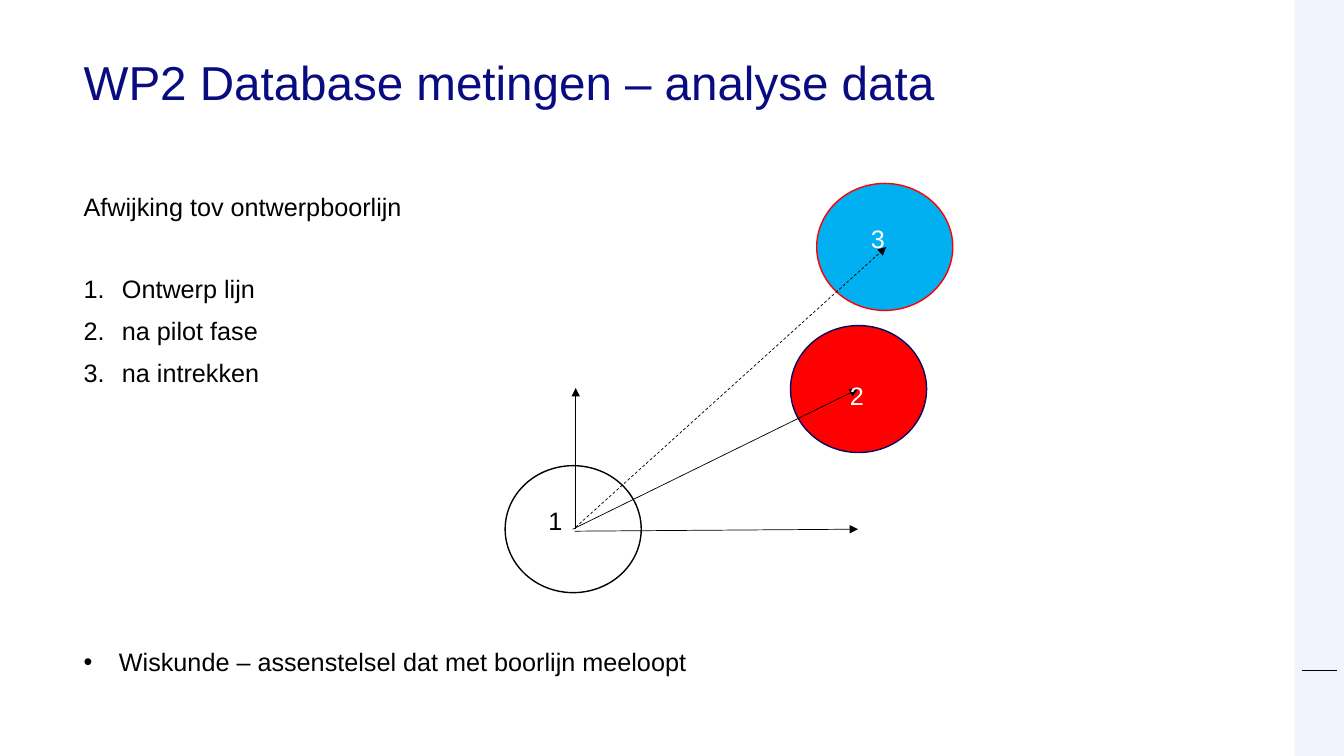
"""Builds the slide on deviations from the designed drilling line."""
from lxml.etree import SubElement
from pptx import Presentation
from pptx.dml.color import RGBColor
from pptx.enum.dml import MSO_LINE
from pptx.enum.shapes import MSO_CONNECTOR as CONNECTOR, MSO_SHAPE as SHAPE
from pptx.enum.text import MSO_ANCHOR as ANCHOR, PP_ALIGN as ALIGN
from pptx.oxml.ns import qn
from pptx.util import Inches, Pt

COLORS = {
    "title": "080C80", "text": "000000", "light": "FFFFFF", "band": "F1F3FD",
    "navy": "06095F", "red": "FF0000", "blue": "00B0F0",
}
FONT = "Arial"
LEFT, WIDTH = 0.83, 11.5


def rgb(name):
    return RGBColor.from_string(COLORS[name])


def style_font(font, size, color):
    font.name, font.size = FONT, Pt(size)
    font.color.rgb = rgb(color)


def clear_margins(frame):
    frame.margin_left = frame.margin_top = 0
    frame.margin_right = frame.margin_bottom = 0


def add_title(slide, text):
    title = slide.shapes.title
    title.left, title.top = Inches(LEFT), Inches(0.59)
    title.width, title.height = Inches(WIDTH), Inches(1.02)
    frame = title.text_frame
    clear_margins(frame)
    frame.text, frame.word_wrap = text, True
    frame.vertical_anchor = ANCHOR.TOP
    heading = frame.paragraphs[0]
    heading.alignment, heading.line_spacing = ALIGN.LEFT, 0.9
    style_font(heading.runs[0].font, 34, "title")


def set_bullet(paragraph, indent, tag, **attributes):
    properties = paragraph._p.get_or_add_pPr()
    properties.set("marL", str(Inches(indent)))
    properties.set("indent", str(-Inches(indent)))
    SubElement(properties, qn("a:buFont"), typeface=FONT)
    SubElement(properties, qn(tag), **attributes)


def add_body(slide, heading, steps, remark):
    body = slide.shapes.add_textbox(Inches(LEFT), Inches(1.93), Inches(WIDTH), Inches(4.72))
    frame = body.text_frame
    clear_margins(frame)
    frame.word_wrap = True
    frame.text = "\n".join([heading, *steps, remark])
    gaps = [0, 39.5] + [10.5] * (len(steps) - 1) + [187]
    for paragraph, gap in zip(frame.paragraphs, gaps):
        paragraph.line_spacing, paragraph.space_before = 0.9, Pt(gap)
        style_font(paragraph.runs[0].font, 18, "text")
    for step in frame.paragraphs[1:-1]:
        set_bullet(step, 0.38, "a:buAutoNum", type="arabicPeriod")
    set_bullet(frame.paragraphs[-1], 0.35, "a:buChar", char="•")


def add_shape(slide, kind, left, top, width, height, fill=None, line=None):
    shape = slide.shapes.add_shape(kind, Inches(left), Inches(top), Inches(width), Inches(height))
    shape.shadow.inherit = False
    if fill:
        shape.fill.solid()
        shape.fill.fore_color.rgb = rgb(fill)
    else:
        shape.fill.background()
    if line:
        shape.line.color.rgb = rgb(line)
        shape.line.width = Pt(1)
    else:
        shape.line.fill.background()


def add_line(slide, start, end, arrow=True, dashed=False):
    ends = [Inches(value) for value in (*start, *end)]
    connector = slide.shapes.add_connector(CONNECTOR.STRAIGHT, *ends)
    connector.line.color.rgb = rgb("text")
    connector.line.width = Pt(0.5)
    if dashed:
        connector.line.dash_style = MSO_LINE.DASH
    if arrow:
        SubElement(connector.line._get_or_add_ln(), qn("a:tailEnd"), type="triangle")
    SubElement(connector._element.spPr, qn("a:effectLst"))


def add_number(slide, text, left, top, color):
    number = slide.shapes.add_textbox(Inches(left), Inches(top), Inches(0.74), Inches(0.4))
    frame = number.text_frame
    frame.text, frame.word_wrap = text, True
    style_font(frame.paragraphs[0].runs[0].font, 18, color)


def main():
    deck = Presentation()
    deck.slide_width, deck.slide_height = Inches(13.33), Inches(7.5)
    slide = deck.slides.add_slide(deck.slide_layouts[5])

    add_shape(slide, SHAPE.RECTANGLE, 12.84, 0, 0.49, 7.5, fill="band")
    add_line(slide, (12.91, 6.65), (13.26, 6.65), arrow=False)
    add_title(slide, "WP2 Database metingen – analyse data")
    add_body(slide, "Afwijking tov ontwerpboorlijn",
             ["Ontwerp lijn", "na pilot fase", "na intrekken"],
             "Wiskunde – assenstelsel dat met boorlijn meeloopt")

    for left, top, fill, line in [(5.01, 4.62, None, "text"),
                                  (7.84, 3.23, "red", "navy"),
                                  (8.1, 1.82, "blue", "red")]:
        add_shape(slide, SHAPE.OVAL, left, top, 1.35, 1.26, fill, line)
    for start, end in [((5.68, 5.25), (8.51, 3.86)),
                       ((5.7, 5.27), (8.51, 5.25)),
                       ((5.71, 5.25), (5.71, 3.85))]:
        add_line(slide, start, end)
    for text, left, top, color in [("1", 5.34, 4.96, "text"),
                                   ("2", 8.33, 3.72, "light"),
                                   ("3", 8.54, 2.17, "light")]:
        add_number(slide, text, left, top, color)
    add_line(slide, (5.71, 5.23), (8.79, 2.45), dashed=True)
    deck.save("out.pptx")


if __name__ == "__main__":
    main()
